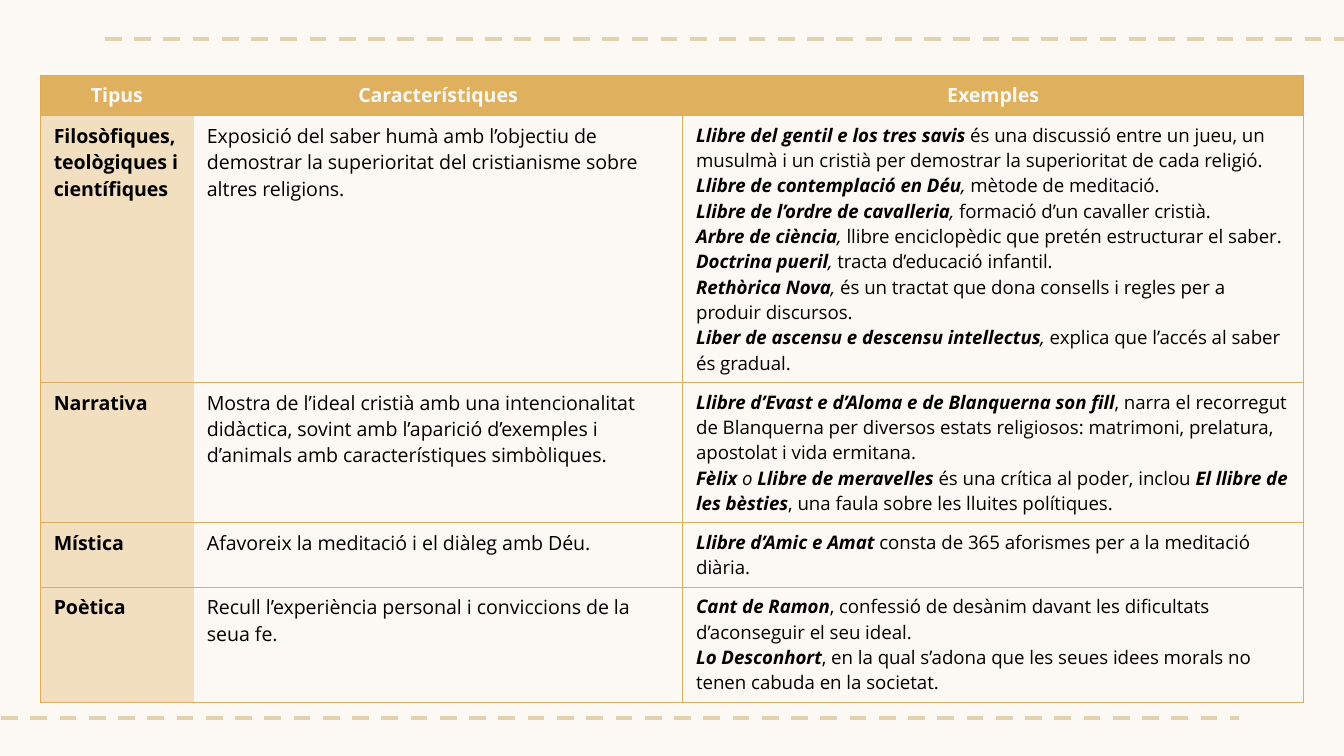
import pptx
import pptx.util
import pptx.dml.color
import pptx.enum.dml
import pptx.enum.shapes
import pptx.enum.text
import pptx.oxml
import pptx.oxml.ns

Inches = pptx.util.Inches
Pt = pptx.util.Pt
RGB = pptx.dml.color.RGBColor.from_string
COLORS = {"paper": "FCF8F4", "dash": "E4D1AD", "gold": "DDAD59",
          "header": "DFB05E", "sand": "F2DFBF", "ink": "000000"}

HEADINGS = ["Tipus", "Característiques", "Exemples"]
# In the examples, *...* marks bold italic and _..._ marks plain italic.
GENRES = [
    ("Filosòfiques, teològiques i científiques",
     "Exposició del saber humà amb l’objectiu de demostrar la superioritat del "
     "cristianisme sobre altres religions.",
     ["*Llibre del gentil e los tres savis* és una discussió entre un jueu, un musulmà "
      "i un cristià per demostrar la superioritat de cada religió.",
      "*Llibre de contemplació en Déu*_, _mètode de meditació.",
      "*Llibre de l’ordre de cavalleria*_, _formació d’un cavaller cristià.",
      "*Arbre de ciència*_, _llibre enciclopèdic que pretén estructurar el saber.",
      "*Doctrina pueril*_,_ tracta d’educació infantil.",
      "*Rethòrica Nova*_, _és un tractat que dona consells i regles per a produir discursos.",
      "*Liber de ascensu e descensu intellectus*_, _explica que l’accés al saber és gradual."]),
    ("Narrativa",
     "Mostra de l’ideal cristià amb una intencionalitat didàctica, sovint amb "
     "l’aparició d’exemples i d’animals amb característiques simbòliques.",
     ["*Llibre d’Evast e d’Aloma e de Blanquerna son fill*, narra el recorregut de "
      "Blanquerna per diversos estats religiosos: matrimoni, prelatura, apostolat i "
      "vida ermitana.",
      "*Fèlix *_o _*Llibre de meravelles *és una crítica al poder, inclou "
      "*El llibre de les bèsties*, una faula sobre les lluites polítiques."]),
    ("Mística",
     "Afavoreix la meditació i el diàleg amb Déu.",
     ["*Llibre d’Amic e Amat* consta de 365 aforismes per a la meditació diària."]),
    ("Poètica",
     "Recull l’experiència personal i conviccions de la seua fe.",
     ["*Cant de Ramon*, confessió de desànim davant les dificultats d’aconseguir el "
      "seu ideal.",
      "*Lo Desconhort*, en la qual s’adona que les seues idees morals no tenen cabuda "
      "en la societat."]),
]


def write(cell, paragraphs, size=10.5, color="ink", bold=False, align="LEFT"):
    """Fill a cell with paragraphs, turning the * and _ marks into runs."""
    frame = cell.text_frame
    for number, text in enumerate(paragraphs):
        paragraph = frame.paragraphs[0] if number == 0 else frame.add_paragraph()
        paragraph.alignment = getattr(pptx.enum.text.PP_ALIGN, align)
        for i, part in enumerate(text.split("*")):
            for j, words in enumerate(part.split("_")):
                if words:
                    run = paragraph.add_run()
                    run.text = words
                    run.font.name = "Open Sans"
                    run.font.size = Pt(size)
                    run.font.bold = bold or i % 2 == 1
                    run.font.italic = i % 2 == 1 or j % 2 == 1
                    run.font.color.rgb = RGB(COLORS[color])


def set_borders(cell, drawn):
    """Draw the sides named in drawn (letters of LRTB) and clear the others."""
    for side in "LRTB":
        paint = (f'<a:solidFill><a:srgbClr val="{COLORS["gold"]}"/></a:solidFill>'
                 if side in drawn else "<a:noFill/>")
        cell._tc.get_or_add_tcPr().append(pptx.oxml.parse_xml(
            f'<a:ln{side} {pptx.oxml.ns.nsdecls("a")} w="{Pt(0.75)}">{paint}</a:ln{side}>'))


deck = pptx.Presentation()
deck.slide_width = Inches(10)
deck.slide_height = deck.slide_width * 9 // 16
slide = deck.slides.add_slide(deck.slide_layouts[6])
slide.background.fill.solid()
slide.background.fill.fore_color.rgb = RGB(COLORS["paper"])

for start, end, y in [(0.78, 10.21, 0.29), (-0.21, 9.22, 5.34)]:
    dashes = slide.shapes.add_connector(
        pptx.enum.shapes.MSO_CONNECTOR.STRAIGHT,
        Inches(start), Inches(y), Inches(end), Inches(y))
    dashes.line.color.rgb = RGB(COLORS["dash"])
    dashes.line.width = Pt(2.25)
    dashes.line.dash_style = pptx.enum.dml.MSO_LINE.DASH
    dashes._element.spPr.append(
        pptx.oxml.parse_xml(f'<a:effectLst {pptx.oxml.ns.nsdecls("a")}/>'))

column_widths = [1.14, 3.64, 4.62]
row_heights = [0.3, 1.98, 1.04, 0.48, 0.86]
works = slide.shapes.add_table(
    len(row_heights), len(column_widths), Inches(0.3), Inches(0.56),
    Inches(sum(column_widths)), Inches(sum(row_heights))).table
for column, width in zip(works.columns, column_widths):
    column.width = Inches(width)
for row, height in zip(works.rows, row_heights):
    row.height = Inches(height)

for column, heading in enumerate(HEADINGS):
    cell = works.cell(0, column)
    write(cell, [heading], color="paper", bold=True, align="CENTER")
    set_borders(cell, ["LTB", "TB", "RTB"][column])
    cell.fill.solid()
    cell.fill.fore_color.rgb = RGB(COLORS["header"])

for row, (genre, features, examples) in enumerate(GENRES, start=1):
    genre_cell, features_cell, examples_cell = works.rows[row].cells
    write(genre_cell, [genre], bold=True)
    write(features_cell, [features])
    write(examples_cell, examples, size=10)
    set_borders(genre_cell, "LTB")
    set_borders(features_cell, "RTB")
    set_borders(examples_cell, "LRTB")
    genre_cell.fill.solid()
    genre_cell.fill.fore_color.rgb = RGB(COLORS["sand"])
    features_cell.fill.background()
    examples_cell.fill.background()

deck.save("out.pptx")
